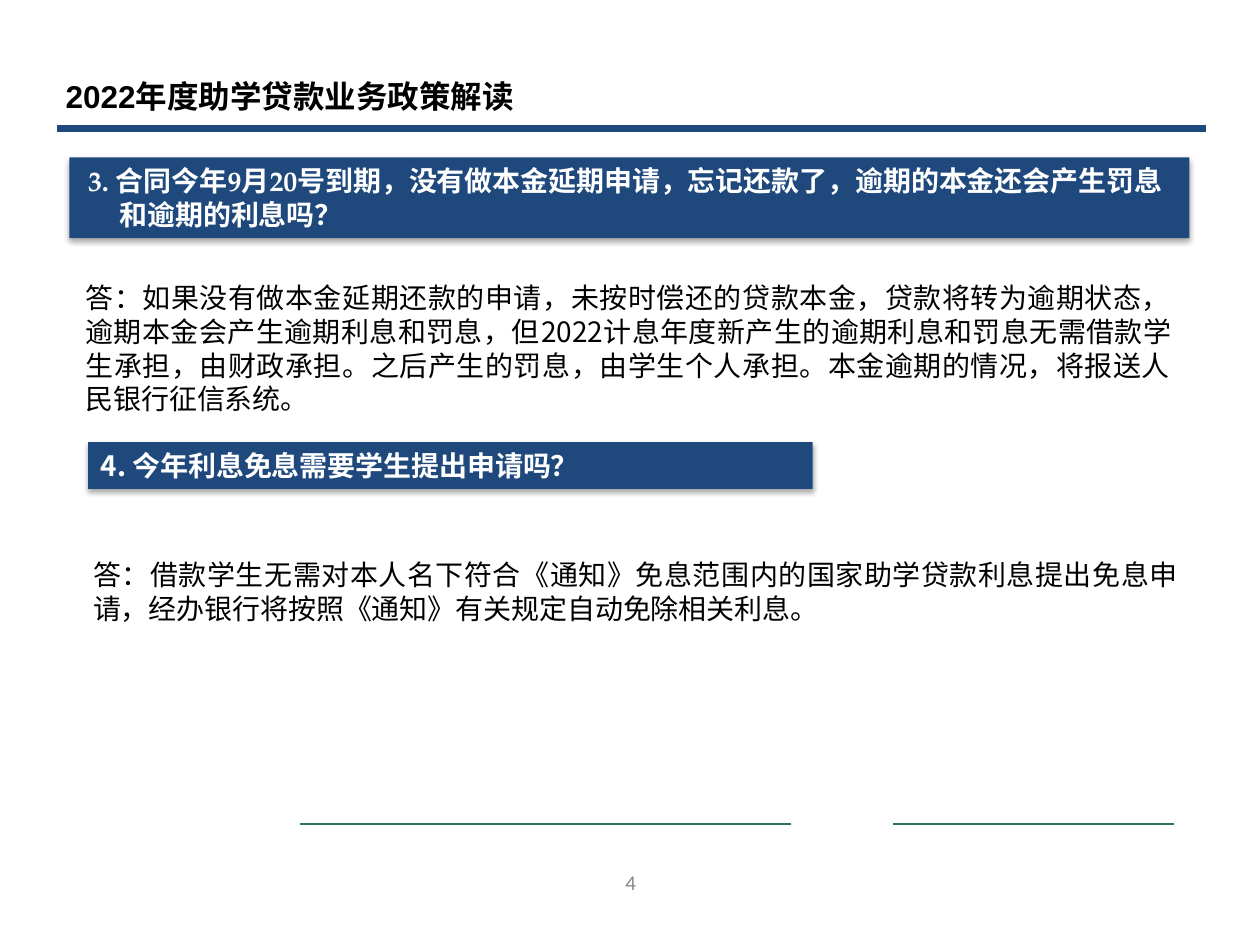
from lxml import etree
from pptx import Presentation
from pptx.dml.color import RGBColor
from pptx.enum.shapes import MSO_CONNECTOR, MSO_SHAPE
from pptx.enum.text import MSO_ANCHOR, PP_ALIGN
from pptx.oxml import parse_xml
from pptx.oxml.ns import nsdecls, qn
from pptx.util import Inches, Pt

LINE, RECT = MSO_CONNECTOR.STRAIGHT, MSO_SHAPE.RECTANGLE
LEFT, MID, JUST = PP_ALIGN.LEFT, PP_ALIGN.CENTER, PP_ALIGN.JUSTIFY
TOP, CENTER = MSO_ANCHOR.TOP, MSO_ANCHOR.MIDDLE
HAN, ROMAN = "Noto Sans CJK SC", "TeX Gyre Pagella"
COLORS = {"navy": "1F497D", "green": "2D7356", "black": "000000",
          "white": "FFFFFF", "gray": "898989"}

# Content: boxes are left, top, width, height in inches
TITLE = "2022年度助学贷款业务政策解读"
PAGE = "4"
# Question: box, text, Latin font, left margin, first-line indent
ASKS = [
    ((0.55, 1.25, 8.89, 0.64),
     "3. 合同今年9月20号到期，没有做本金延期申请，忘记还款了，"
     "逾期的本金还会产生罚息和逾期的利息吗？", ROMAN, 0.3, -0.25),
    ((0.7, 3.51, 5.75, 0.37), "4. 今年利息免息需要学生提出申请吗？", HAN, 0, 0),
]
REPLIES = [
    ((0.58, 2.18, 8.82, 1.18),
     "答：如果没有做本金延期还款的申请，未按时偿还的贷款本金，贷款将转为逾期状态，"
     "逾期本金会产生逾期利息和罚息，但2022计息年度新产生的逾期利息和罚息无需借款学"
     "生承担，由财政承担。之后产生的罚息，由学生个人承担。本金逾期的情况，将报送人"
     "民银行征信系统。"),
    ((0.64, 4.38, 8.82, 0.64),
     "答：借款学生无需对本人名下符合《通知》免息范围内的国家助学贷款利息提出免息申"
     "请，经办银行将按照《通知》有关规定自动免除相关利息。"),
]
# Rule: start x, end x, y, color, width
RULES = [(0.45, 9.57, 1.02, "navy", 4),
         (9.32, 7.09, 6.54, "green", 0.75),
         (6.28, 2.38, 6.54, "green", 0.75)]
SHADOW = (f'<a:effectLst {nsdecls("a")}><a:outerShdw blurRad="40000" dist="23000" '
          'dir="5400000" rotWithShape="0"><a:srgbClr val="000000">'
          '<a:alpha val="35000"/></a:srgbClr></a:outerShdw></a:effectLst>')


def rgb(name):
    return RGBColor.from_string(COLORS[name])


def place(shape, box):
    shape.left, shape.top, shape.width, shape.height = map(Inches, box)


def write(shape, text, size, color, font=HAN, bold=False, align=LEFT, anchor=TOP):
    frame = shape.text_frame
    frame.word_wrap = True
    frame.vertical_anchor = anchor
    frame.margin_left = frame.margin_right = Inches(0.1)
    frame.margin_top = frame.margin_bottom = Inches(0.05)
    para = frame.paragraphs[0]
    para.alignment = align
    run = para.add_run()
    run.text = text
    run.font.size, run.font.bold, run.font.name = Pt(size), bold, font
    run.font.color.rgb = rgb(color)
    east = etree.SubElement(run.font._element, qn("a:ea"))
    east.set("typeface", HAN)
    return para


deck = Presentation()
deck.slide_width, deck.slide_height = Inches(10), Inches(7.5)
slide = deck.slides.add_slide(deck.slide_layouts[5])
shapes = slide.shapes

# Rules under the title and at the foot
for start, end, y, color, width in RULES:
    rule = shapes.add_connector(LINE, Inches(start), Inches(y), Inches(end), Inches(y))
    rule.line.color.rgb = rgb(color)
    rule.line.width = Pt(width)
    etree.SubElement(rule._element.spPr, qn("a:effectLst"))

# Title and page number
place(shapes.title, (0.42, 0.56, 9, 0.41))
write(shapes.title, TITLE, 18, "black", "Arial", True, anchor=CENTER)
page = shapes.add_textbox(*map(Inches, (3.84, 6.8, 2.33, 0.4)))
write(page, PAGE, 12, "gray", "Calibri", align=MID, anchor=CENTER)

# Question bars with a soft shadow
for box, text, font, margin, indent in ASKS:
    bar = shapes.add_shape(RECT, *map(Inches, box))
    bar.fill.solid()
    bar.fill.fore_color.rgb = rgb("navy")
    bar.line.fill.background()
    bar._element.spPr.append(parse_xml(SHADOW))
    para = write(bar, text, 16, "white", font, True)
    props = para._p.get_or_add_pPr()
    props.set("marL", str(Inches(margin)))
    props.set("indent", str(Inches(indent)))

# Answers
for box, text in REPLIES:
    write(shapes.add_textbox(*map(Inches, box)), text, 16, "black", align=JUST)

deck.save("out.pptx")
